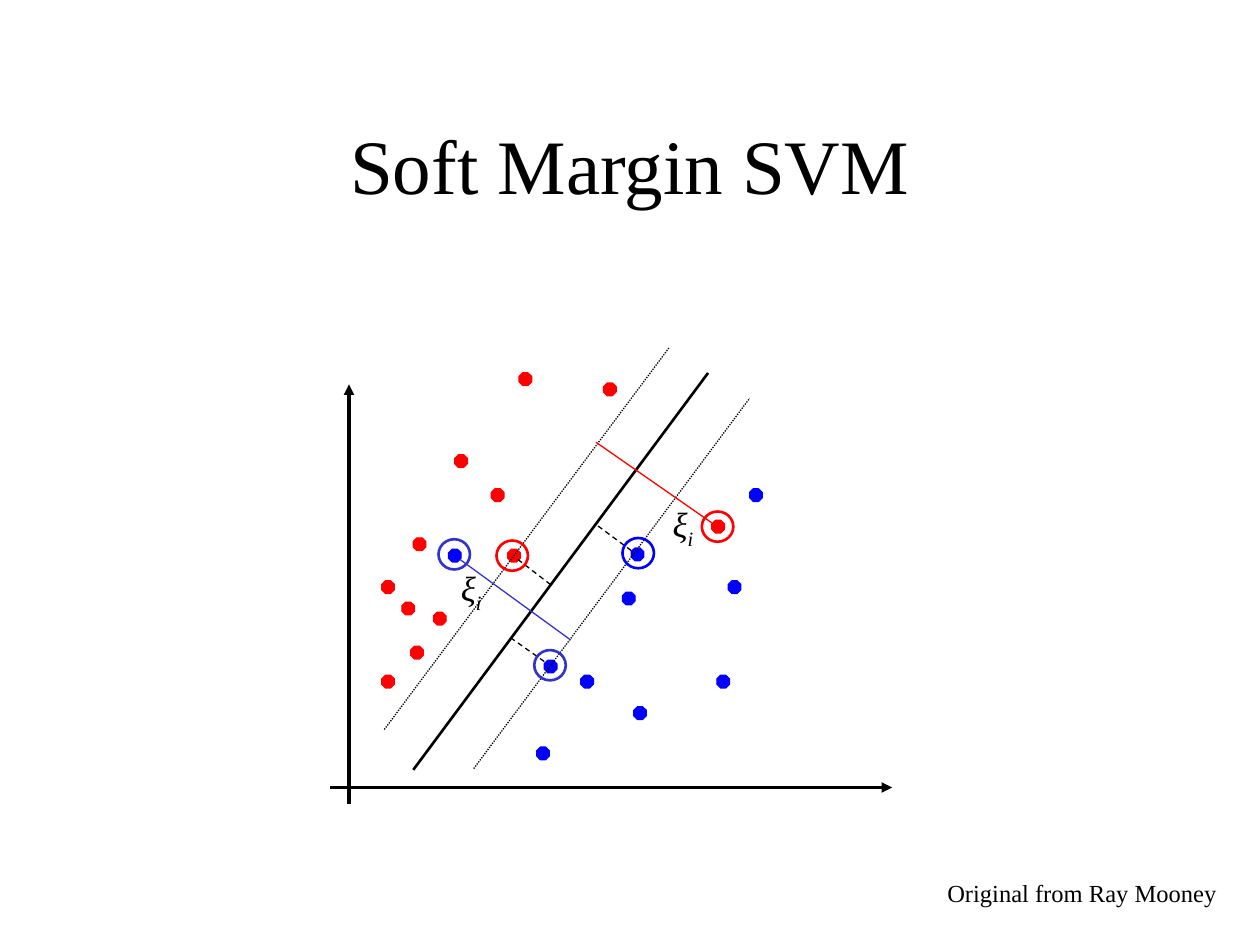
"""Build the Soft Margin SVM slide."""
from lxml.etree import SubElement
from pptx import Presentation
from pptx.dml.color import RGBColor
from pptx.enum.dml import MSO_LINE as Dash
from pptx.enum.shapes import MSO_CONNECTOR as Link, MSO_SHAPE as Shape
from pptx.enum.text import MSO_ANCHOR as Anchor, MSO_AUTO_SIZE as Fit, PP_ALIGN as Align
from pptx.oxml.ns import qn
from pptx.util import Pt

PX = 9144
COLORS = {"black": "000000", "red": "FF0000", "blue": "0000FF", "indigo": "3333CC"}
DOT = 10
RING_WIDTH, RING_HEIGHT = 25, 24

deck = Presentation()
deck.slide_width, deck.slide_height = 1000 * PX, 750 * PX
page = deck.slides.add_slide(deck.slide_layouts[6])


def style_line(line, color, width, dash=None):
    line.color.rgb = RGBColor.from_string(COLORS[color])
    for name, value in {"width": Pt(width), "dash_style": dash}.items():
        setattr(line, name, value)


def add_text(bounds, spans, size, frame_format, align=Align.LEFT):
    box = page.shapes.add_textbox(*(value * PX for value in bounds))
    for name, value in frame_format.items():
        setattr(box.text_frame, name, value)
    para = box.text_frame.paragraphs[0]
    para.alignment = align
    for text, font_format, baseline in spans:
        span = para.add_run()
        span.text = text
        span.font.color.rgb = RGBColor.from_string(COLORS["black"])
        for name, value in {"name": "Times New Roman", "size": Pt(size), **font_format}.items():
            setattr(span.font, name, value)
        if baseline:
            span._r.get_or_add_rPr().set("baseline", str(baseline))


add_text((75, 67, 850, 125), [("Soft Margin SVM", {}, 0)], 44,
         {"word_wrap": True, "vertical_anchor": Anchor.MIDDLE}, Align.CENTER)

points = {
    "red": [(390, 388), (328, 427), (344, 486), (303, 536), (361, 361), (303, 461), (319, 478),
            (403, 436), (412, 296), (479, 304), (326, 513), (565, 413)],
    "blue": [(501, 435), (461, 536), (569, 536), (426, 593), (494, 470), (432, 524), (503, 561),
             (578, 461), (595, 388), (356, 436)],
}
for color, corners in points.items():
    for left, top in corners:
        dot = page.shapes.add_shape(Shape.OCTAGON, left * PX, top * PX, DOT * PX, DOT * PX)
        dot.shadow.inherit = False
        dot.fill.solid()
        dot.fill.fore_color.rgb = RGBColor.from_string(COLORS[color])
        style_line(dot.line, color, 0.75)

axes = [(277, 638, 277, 305), (262, 625, 708, 625)]
lines = [(ends, "black", 2, None) for ends in axes] + [
    ((328, 611, 562, 296), "black", 1.5, None),
    ((501, 437, 474, 417), "black", 0.75, Dash.DASH),
    ((432, 525, 405, 506), "black", 0.75, Dash.DASH),
    ((437, 464, 411, 444), "black", 0.75, Dash.DASH),
    ((376, 610, 595, 316), "black", 0.75, Dash.ROUND_DOT),
    ((305, 579, 531, 276), "black", 0.75, Dash.ROUND_DOT),
    ((565, 415, 473, 351), "red", 0.75, None),
    ((365, 444, 453, 508), "indigo", 0.75, None),
]
for ends, color, width, dash in lines:
    connector = page.shapes.add_connector(Link.STRAIGHT, *(value * PX for value in ends))
    style_line(connector.line, color, width, dash)
    if ends in axes:
        SubElement(connector.line._get_or_add_ln(), qn("a:tailEnd"), type="triangle")
    SubElement(connector._element.spPr, qn("a:effectLst"))

rings = [(394, 429, "red"), (424, 516, "indigo"), (494, 427, "blue"),
         (557, 406, "red"), (348, 428, "indigo")]
for left, top, color in rings:
    ring = page.shapes.add_shape(Shape.OVAL, left * PX, top * PX, RING_WIDTH * PX, RING_HEIGHT * PX)
    ring.shadow.inherit = False
    ring.fill.background()
    style_line(ring.line, color, 1.5)

for left, top in [(524, 394), (356, 445)]:
    add_text((left, top, 77, 43), [("ξ", {"italic": True}, 0), ("i", {"italic": True}, -25000)], 20,
             {"word_wrap": True, "auto_size": Fit.SHAPE_TO_FIT_TEXT})

add_text((742, 692, 236, 34), [("Original from Ray Mooney", {}, 0)], 14,
         {"word_wrap": False, "auto_size": Fit.SHAPE_TO_FIT_TEXT})

deck.save("out.pptx")
